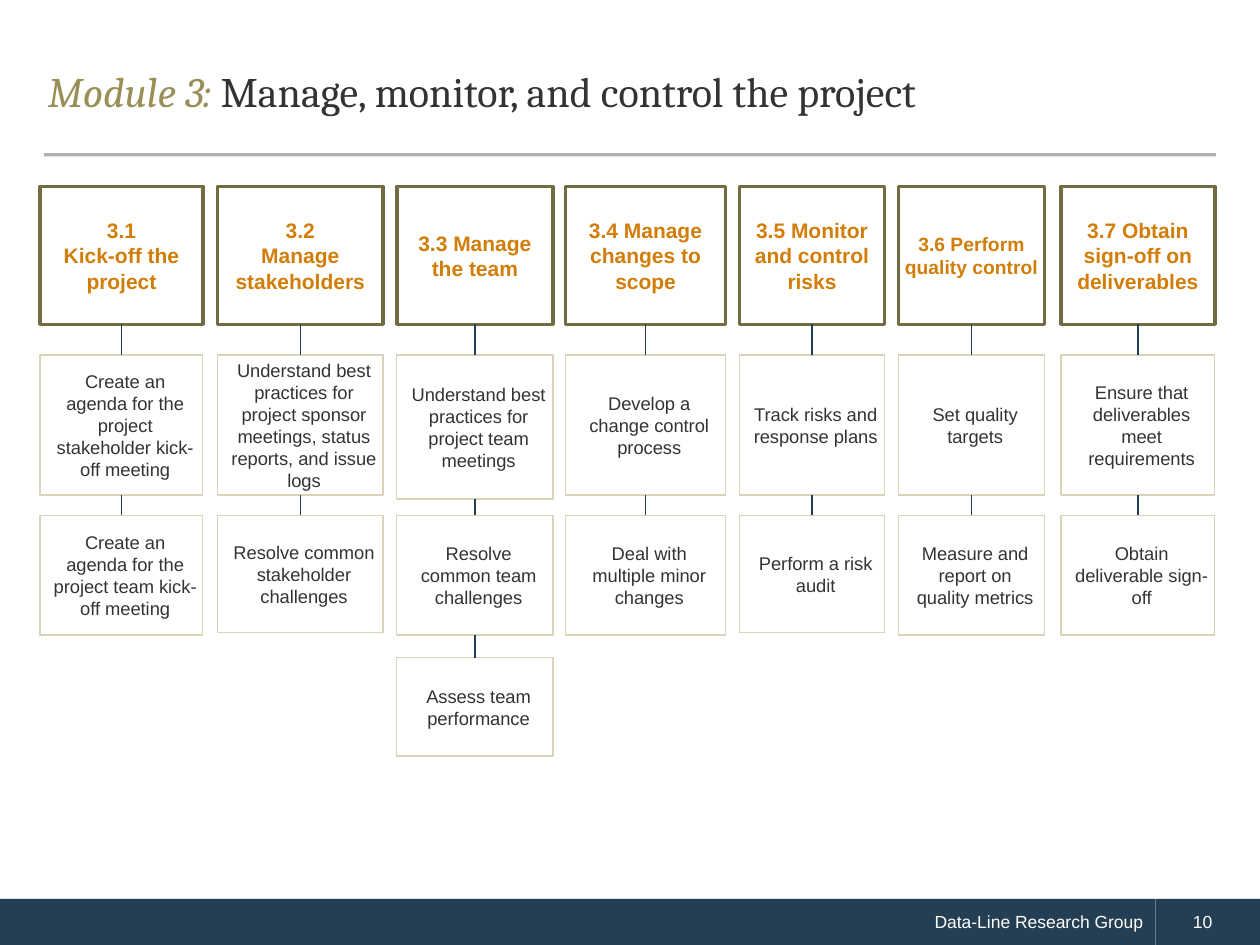
from lxml import etree
from pptx import Presentation
from pptx.dml.color import RGBColor
from pptx.enum.shapes import MSO_CONNECTOR, MSO_SHAPE
from pptx.enum.text import MSO_ANCHOR, MSO_AUTO_SIZE, PP_ALIGN
from pptx.oxml.ns import qn
from pptx.util import Cm, Pt

RECTANGLE = MSO_SHAPE.RECTANGLE
STRAIGHT = MSO_CONNECTOR.STRAIGHT
MIDDLE = MSO_ANCHOR.MIDDLE
NO_AUTOFIT = MSO_AUTO_SIZE.NONE
LEFT, CENTER, RIGHT = PP_ALIGN.LEFT, PP_ALIGN.CENTER, PP_ALIGN.RIGHT
BOTTOM_SIDE, TOP_SIDE = 2, 0

COLORS = {
    "navy": "243F54",
    "connector": "223E53",
    "olive": "736B41",
    "beige": "D8D3BA",
    "gold": "998F57",
    "orange": "D17D08",
    "text": "333333",
    "rule": "45433E",
    "white": "FFFFFF",
}

HEADER_TOP, HEADER_HEIGHT = 3.76, 2.78
STEP_TOPS = (7.16, 10.39, 13.26)
STEP_HEIGHTS = (2.82, 2.41, 1.98)

COLUMNS = [
    {"left": 0.81, "width": 3.28, "header": "3.1\nKick-off the project",
     "steps": ["Create an agenda for the project stakeholder kick-off meeting",
               "Create an agenda for the project team kick-off meeting"]},
    {"left": 4.39, "width": 3.33, "header": "3.2\nManage stakeholders",
     "heights": (2.82, 2.36),
     "steps": ["Understand best practices for project sponsor meetings, "
               "status reports, and issue logs",
               "Resolve common stakeholder challenges"]},
    {"left": 8.0, "width": 3.15, "header": "3.3 Manage the team",
     "heights": (2.9, 2.41, 1.98),
     "steps": ["Understand best practices for project team meetings",
               "Resolve common team challenges",
               "Assess team performance"]},
    {"left": 11.4, "width": 3.23, "header": "3.4 Manage changes to scope",
     "steps": ["Develop a change control process",
               "Deal with multiple minor changes"]},
    {"left": 14.91, "width": 2.92, "header": "3.5 Monitor and control risks",
     "heights": (2.82, 2.36),
     "steps": ["Track risks and response plans", "Perform a risk audit"]},
    {"left": 18.11, "width": 2.95, "header": "3.6 Perform quality control",
     "header_size": 11,
     "steps": ["Set quality targets", "Measure and report on quality metrics"]},
    {"left": 21.39, "width": 3.1, "header": "3.7 Obtain sign-off on deliverables",
     "steps": ["Ensure that deliverables meet requirements",
               "Obtain deliverable sign-off"]},
]


def rgb(name):
    return RGBColor.from_string(COLORS[name])


def add_text(paragraph, text, size=10.5, color="text", font="Arial",
             bold=False, italic=False, align=CENTER):
    paragraph.alignment = align
    run = paragraph.add_run()
    run.text = text
    run.font.name = font
    run.font.size = Pt(size)
    run.font.bold = bold
    run.font.italic = italic
    run.font.color.rgb = rgb(color)


def add_box(slide, left, top, width, height, text, fill=None, line=None,
            line_width=0.75, margin_left=0.25, margin_right=0.1, **text_format):
    shape = slide.shapes.add_shape(
        RECTANGLE, Cm(left), Cm(top), Cm(width), Cm(height))
    shape.shadow.inherit = False
    if fill:
        shape.fill.solid()
        shape.fill.fore_color.rgb = rgb(fill)
    else:
        shape.fill.background()
    if line:
        shape.line.color.rgb = rgb(line)
        shape.line.width = Pt(line_width)
    else:
        shape.line.fill.background()
    frame = shape.text_frame
    frame.word_wrap = True
    frame.vertical_anchor = MIDDLE
    frame.margin_left, frame.margin_right = Cm(margin_left), Cm(margin_right)
    frame.margin_top = frame.margin_bottom = Cm(0.13)
    for index, part in enumerate(text.split("\n")):
        paragraph = frame.add_paragraph() if index else frame.paragraphs[0]
        add_text(paragraph, part, **text_format)
    return shape


def add_line(slide, start, end, color, width):
    connector = slide.shapes.add_connector(
        STRAIGHT, *(Cm(length) for length in start + end))
    connector.line.color.rgb = rgb(color)
    connector.line.width = Pt(width)
    etree.SubElement(connector._element.spPr, qn("a:effectLst"))
    return connector


def join_boxes(slide, upper, lower):
    connector = add_line(slide, (0, 0), (0, 0), "connector", 0.75)
    connector.begin_connect(upper, BOTTOM_SIDE)
    connector.end_connect(lower, TOP_SIDE)


def add_title(slide):
    title = slide.shapes.title
    title.left, title.top = Cm(0.71), Cm(0.69)
    title.width, title.height = Cm(23.95), Cm(2.39)
    frame = title.text_frame
    frame.word_wrap = True
    frame.auto_size = NO_AUTOFIT
    frame.vertical_anchor = MIDDLE
    paragraph = frame.paragraphs[0]
    paragraph.line_spacing = Pt(26)
    title_format = {"size": 24, "font": "Cambria", "align": LEFT}
    add_text(paragraph, "Module 3:", color="gold", italic=True, **title_format)
    add_text(paragraph, " Manage, monitor, and control the project", **title_format)


def add_title_rule(slide):
    rule = add_line(slide, (0.89, 3.12), (24.51, 3.12), "rule", 1.75)
    color = rule.line._ln.find(".//" + qn("a:srgbClr"))
    etree.SubElement(color, qn("a:alpha"), val="42000")


def add_footer(slide):
    footer_format = {"fill": "navy", "color": "white", "size": 10,
                     "margin_right": 0.25}
    add_box(slide, 0, 18.12, 23.29, 0.93, "Data-Line Research Group",
            align=RIGHT, **footer_format)
    add_box(slide, 23.29, 18.12, 2.11, 0.93, "10",
            align=LEFT, margin_left=0.76, **footer_format)


def add_column(slide, column):
    left, width = column["left"], column["width"]
    upper = add_box(slide, left, HEADER_TOP, width, HEADER_HEIGHT,
                    column["header"], line="olive", line_width=2,
                    margin_left=0.1, size=column.get("header_size", 12),
                    color="orange", bold=True)
    heights = column.get("heights", STEP_HEIGHTS)
    for text, top, height in zip(column["steps"], STEP_TOPS, heights):
        lower = add_box(slide, left, top, width, height, text,
                        fill="white", line="beige")
        join_boxes(slide, upper, lower)
        upper = lower


def main():
    presentation = Presentation()
    presentation.slide_width, presentation.slide_height = Cm(25.4), Cm(19.05)
    slide = presentation.slides.add_slide(presentation.slide_layouts[5])
    add_footer(slide)
    add_title_rule(slide)
    add_title(slide)
    for column in COLUMNS:
        add_column(slide, column)
    presentation.save("out.pptx")


if __name__ == "__main__":
    main()
